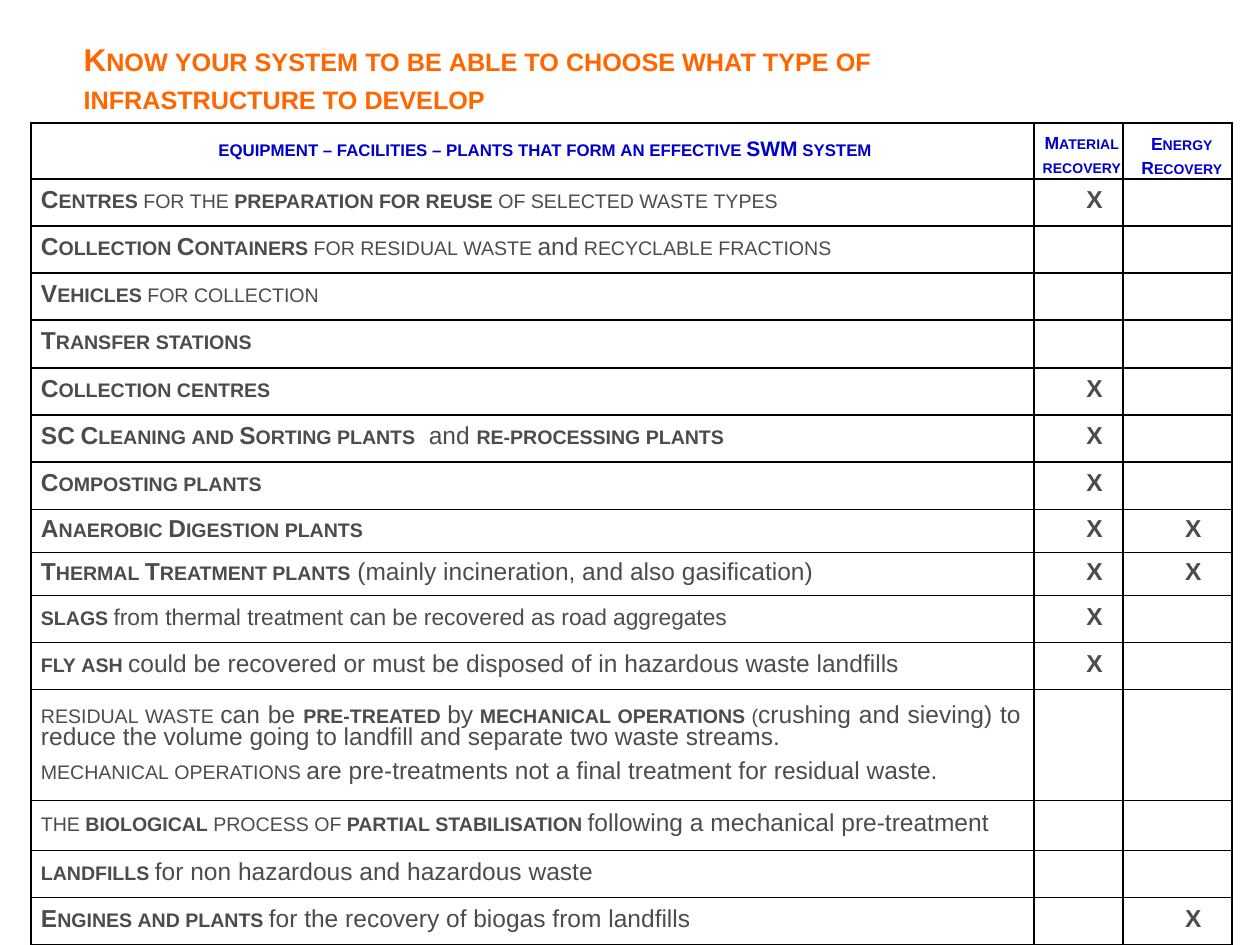
from lxml.etree import SubElement
from pptx import Presentation
from pptx.dml.color import RGBColor
from pptx.enum.text import MSO_ANCHOR, MSO_AUTO_SIZE, PP_ALIGN
from pptx.oxml.ns import qn
from pptx.util import Emu, Pt

PX = 914400 // 126
COLORS = {"title": "FF6600", "header": "0000CC", "body": "4C4C4C", "border": "000000"}
STYLES = {
    "strong": (14, True, True),
    "caps": (14, False, True),
    "plain": (14, False, False),
    "fine": (13, False, False),
    "mark": (14, True, False),
    "title": (18, True, True),
    "header": (12, True, True),
    "recovery": (10, True, True),
}
COLUMNS = [1003, 89, 109]
HEADINGS = [
    ("equipment – facilities – plants that form an effective SWM system", "header", 32, (6, 6, 13, 10)),
    ("Material recovery", "recovery", 3, (4, 4, 0, 0)),
    ("Energy Recovery", "recovery", 3, (6, 6, 0, 0)),
]
HEADER_HEIGHT = 56
TABLE_HEIGHT = 919
ROWS = [
    (47, "X", "", [[("Centres", "strong"), (" for the ", "caps"),
                    ("preparation for reuse", "strong"), (" of selected waste types", "caps")]]),
    (47, "", "", [[("Collection Containers", "strong"), (" for residual waste ", "caps"),
                   ("and", "plain"), (" recyclable fractions", "caps")]]),
    (47, "", "", [[("Vehicles", "strong"), (" for collection", "caps")]]),
    (48, "", "", [[("Transfer stations", "strong")]]),
    (47, "X", "", [[("Collection centres", "strong")]]),
    (47, "X", "", [[("SC Cleaning and Sorting plants", "strong"), ("  and ", "plain"),
                    ("re-processing plants", "strong")]]),
    (48, "X", "", [[("Composting plants", "strong")]]),
    (43, "X", "X", [[("Anaerobic Digestion plants", "strong")]]),
    (43, "X", "X", [[("Thermal Treatment plants", "strong"),
                     (" (mainly incineration, and also gasification)", "plain")]]),
    (47, "X", "", [[("slags ", "strong"),
                    ("from thermal treatment can be recovered as road aggregates", "fine")]]),
    (47, "X", "", [[("fly ash ", "strong"),
                    ("could be recovered or must be disposed of in hazardous waste landfills", "plain")]]),
    (111, "", "", [
        [("residual waste ", "caps"), ("can be ", "plain"), ("pre-treated ", "strong"),
         ("by", "plain"), (" mechanical operations ", "strong"), ("(", "caps"),
         ("crushing and sieving) to reduce the volume going to landfill and separate two waste streams.",
          "plain")],
        [("mechanical operations ", "caps"),
         ("are pre-treatments not a final treatment for residual waste.", "plain")]]),
    (50, "", "", [[("the ", "caps"), ("biological", "strong"), (" process of ", "caps"),
                   ("partial stabilisation ", "strong"),
                   ("following a mechanical pre-treatment", "plain")]]),
    (47, "", "", [[("landfills ", "strong"), ("for non hazardous and hazardous waste", "plain")]]),
    (47, "", "X", [[("Engines and plants ", "strong"),
                    ("for the recovery of biogas from landfills ", "plain")]]),
]


def px(length):
    """Turn px into EMU."""
    return Emu(length * PX)


def add_run(paragraph, text, style, color):
    """Add one run in a named style."""
    size, bold, small_caps = STYLES[style]
    run = paragraph.add_run()
    run.text = text
    run.font.name = "Arial"
    run.font.size = Pt(size)
    run.font.bold = bold
    run.font.color.rgb = RGBColor.from_string(COLORS[color])
    if small_caps:
        run._r.get_or_add_rPr().set("cap", "small")


def add_title(slide):
    """Place and write the title."""
    title = slide.shapes.title
    title.left, title.top, title.width, title.height = map(px, (71, 34, 908, 60))
    frame = title.text_frame
    frame.word_wrap = True
    frame.auto_size = MSO_AUTO_SIZE.NONE
    frame.vertical_anchor = MSO_ANCHOR.TOP
    heading = frame.paragraphs[0]
    heading.alignment = PP_ALIGN.LEFT
    add_run(heading, "Know your system to be able to choose what type of infrastructure to develop",
            "title", "title")


def frame_cell(cell, margins):
    """Give a cell its borders, margins and clear fill."""
    properties = cell._tc.get_or_add_tcPr()
    for side in ("lnL", "lnR", "lnT", "lnB"):
        line = SubElement(properties, qn(f"a:{side}"), w=str(Pt(1)))
        SubElement(SubElement(line, qn("a:solidFill")), qn("a:srgbClr"), val=COLORS["border"])
    cell.fill.background()
    cell.vertical_anchor = MSO_ANCHOR.MIDDLE
    cell.margin_left, cell.margin_top, cell.margin_right, cell.margin_bottom = map(px, margins)


def write_cell(cell, paragraphs, color, align, indent, spacing, gap):
    """Write paragraphs of styled runs into a cell."""
    frame = cell.text_frame
    for index, runs in enumerate(paragraphs):
        paragraph = frame.add_paragraph() if index else frame.paragraphs[0]
        paragraph.alignment = align
        paragraph.line_spacing = Pt(spacing)
        paragraph.space_before = paragraph.space_after = Pt(gap)
        properties = paragraph._p.get_or_add_pPr()
        properties.set("marL", str(px(indent)))
        properties.set("indent", "0")
        for text, style in runs:
            add_run(paragraph, text, style, color)


def add_recovery_table(slide):
    """Add the table of facilities and what they recover."""
    heights = [HEADER_HEIGHT] + [row[0] for row in ROWS]
    holder = slide.shapes.add_table(len(heights), len(COLUMNS), px(31), px(123),
                                    px(sum(COLUMNS)), px(TABLE_HEIGHT))
    table = holder.table
    table.first_row = table.horz_banding = False
    for column, width in zip(table.columns, COLUMNS):
        column.width = px(width)
    for row, height in zip(table.rows, heights):
        row.height = px(height)
    holder.height = px(TABLE_HEIGHT)
    for column, (text, style, indent, margins) in enumerate(HEADINGS):
        cell = table.cell(0, column)
        frame_cell(cell, margins)
        write_cell(cell, [[(text, style)]], "header", PP_ALIGN.CENTER, indent, 14, 2)
    for row, (_, material, energy, facility) in enumerate(ROWS, 1):
        cell = table.cell(row, 0)
        frame_cell(cell, (10, 10, 13, 10))
        write_cell(cell, facility, "body", PP_ALIGN.JUSTIFY, 0, 13, 3)
        for column, mark in enumerate((material, energy), 1):
            cell = table.cell(row, column)
            frame_cell(cell, (10, 10, 10, 10) if mark else (10, 3, 10, 3))
            if mark:
                write_cell(cell, [[(mark, "mark")]], "body", PP_ALIGN.CENTER, 32, 13, 3)


def main():
    """Build and save the slide."""
    presentation = Presentation()
    presentation.slide_width, presentation.slide_height = px(1260), px(945)
    slide = presentation.slides.add_slide(presentation.slide_layouts[5])
    add_recovery_table(slide)
    add_title(slide)
    presentation.save("out.pptx")


if __name__ == "__main__":
    main()
